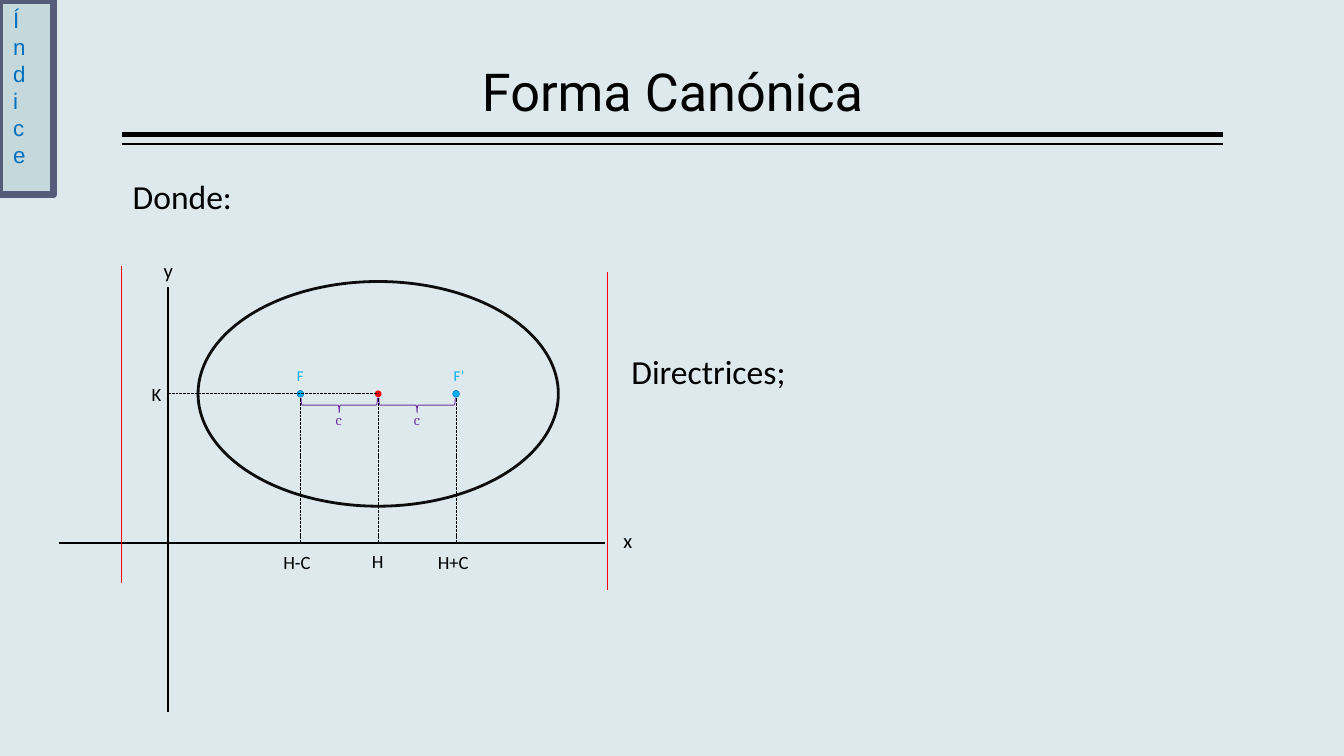
from lxml import etree
from pptx import Presentation
from pptx.dml.color import RGBColor
from pptx.enum.dml import MSO_LINE
from pptx.enum.shapes import MSO_CONNECTOR, MSO_SHAPE
from pptx.enum.text import MSO_ANCHOR, PP_ALIGN
from pptx.oxml.ns import qn
from pptx.util import Pt

STRAIGHT = MSO_CONNECTOR.STRAIGHT
RECTANGLE, OVAL, BRACE = MSO_SHAPE.RECTANGLE, MSO_SHAPE.OVAL, MSO_SHAPE.LEFT_BRACE
DASH = MSO_LINE.SQUARE_DOT
BOTTOM, CENTER = MSO_ANCHOR.BOTTOM, PP_ALIGN.CENTER
BLACK, RED, CYAN, BLUE, PURPLE = "000000", "FF0000", "00B0F0", "0070C0", "7030A0"


def color(value):
    return RGBColor.from_string(value)


def add_figure(kind, left, top, width, height, fill=None, line=None, weight=0):
    figure = slide.shapes.add_shape(kind, Pt(left), Pt(top), Pt(width), Pt(height))
    figure.shadow.inherit = False
    if fill:
        figure.fill.solid()
        figure.fill.fore_color.rgb = color(fill)
    else:
        figure.fill.background()
    if line:
        figure.line.color.rgb = color(line)
        figure.line.width = Pt(weight)
    else:
        figure.line.fill.background()
    return figure


deck = Presentation()
deck.slide_width, deck.slide_height = Pt(720), Pt(405)
slide = deck.slides.add_slide(deck.slide_layouts[5])
slide.background.fill.solid()
slide.background.fill.fore_color.rgb = color("DDE9EC")

# Title
title = slide.shapes.title
title.left, title.top, title.width, title.height = Pt(65.5), Pt(4.3), Pt(589.5), Pt(65)
frame = title.text_frame
frame.word_wrap = True
frame.vertical_anchor = BOTTOM
frame.margin_left = frame.margin_right = 0
frame.margin_top = frame.margin_bottom = Pt(3.6)
para = frame.paragraphs[0]
para.alignment = CENTER
para.line_spacing = 0.9
span = para.add_run()
span.text = "Forma Canónica"
span.font.size = Pt(28)
span.font.name = "Roboto"
span.font.color.rgb = color(BLACK)

# Ellipse geometry
center_x, center_y = 202.6, 211
radius_x, radius_y = 96.5, 60.2
focus = 41.7
axis_x, axis_y = 90, 291
columns = [center_x - focus, center_x, center_x + focus]

# Index tab
tab = add_figure(RECTANGLE, 0, 0, 28.8, 104.4, "528693", "545C79", 3.78)
tint = tab.fill._xPr.find(qn("a:solidFill"))[0]
etree.SubElement(tint, qn("a:alpha")).set("val", "17000")

# Ellipse, centre and foci
add_figure(OVAL, center_x - radius_x, center_y - radius_y,
           2 * radius_x, 2 * radius_y, None, "0D0D0D", 1.5)
for x, fill, line in zip(columns, (CYAN, RED, CYAN), (BLUE, None, BLUE)):
    add_figure(OVAL, x - 1.8, center_y - 1.8, 3.6, 3.6, fill, line, 0.25)

# Braces for the focal distance
for left in columns[:2]:
    brace = add_figure(BRACE, left + focus / 2 - 4, 196.5, 8, 41, None, PURPLE, 0.5)
    brace.rotation = 270

# Title rules, axes, guides and directrices
lines = [
    (655, 72, 65.5, 72, BLACK, 3, None),
    (655, 77, 65.5, 77, BLACK, 1, None),
    (axis_x, 381.5, axis_x, 154, BLACK, 1, None),
    (31.5, axis_y, 324, axis_y, BLACK, 1, None),
    (axis_x, center_y, center_x, center_y, BLACK, 0.5, DASH),
    (65, 312.5, 65, 142.5, RED, 0.5, None),
    (325.3, 316, 325.3, 145.5, RED, 0.5, None),
]
lines += [(x, axis_y, x, center_y + 2, BLACK, 0.5, DASH) for x in columns]
for x1, y1, x2, y2, stroke, weight, dash in lines:
    rule = slide.shapes.add_connector(STRAIGHT, Pt(x1), Pt(y1), Pt(x2), Pt(y2))
    rule.line.color.rgb = color(stroke)
    rule.line.width = Pt(weight)
    if dash:
        rule.line.dash_style = dash
    etree.SubElement(rule._element.spPr, qn("a:effectLst"))

# Labels: text, left, top, width, height, size, font, colour
labels = [
    ("Índice", 0, 0, 31, 113, 12, "Arial", BLUE),
    ("Donde:", 64, 90.7, 74, 29, 18, "Calibri", BLACK),
    ("Directrices;", 331.2, 184.3, 127, 29, 18, "Calibri", BLACK),
    ("x", 326.9, 280.8, 22, 19.5, 11, "Calibri", BLACK),
    ("y", 80.6, 136, 20, 19.5, 11, "Calibri", BLACK),
    ("K", 74.2, 201.6, 21.5, 19.5, 10, "Calibri", BLACK),
    ("H-C", 144.7, 291.6, 33, 19.5, 10, "Calibri", BLACK),
    ("H", 192.2, 291, 22, 19.5, 10, "Calibri", BLACK),
    ("H+C", 227.5, 291.6, 36, 19.5, 10, "Calibri", BLACK),
    ("F", 152, 193, 20, 17, 8, "Calibri", CYAN),
    ("F’", 236, 193, 21.5, 17, 8, "Calibri", CYAN),
    ("c", 172.8, 216.7, 17, 17, 8, "Cambria", PURPLE),
    ("c", 214.6, 216.7, 17, 17, 8, "Cambria", PURPLE),
]
for text, left, top, width, height, size, font, ink in labels:
    box = slide.shapes.add_textbox(Pt(left), Pt(top), Pt(width), Pt(height))
    frame = box.text_frame
    frame.word_wrap = True
    if text == "Índice":
        frame._txBody.bodyPr.set("vert", "wordArtVert")
    para = frame.paragraphs[0]
    if text in ("x", "y"):
        para.line_spacing = 0.9
    span = para.add_run()
    span.text = text
    span.font.size = Pt(size)
    span.font.name = font
    span.font.color.rgb = color(ink)

deck.save("out.pptx")
